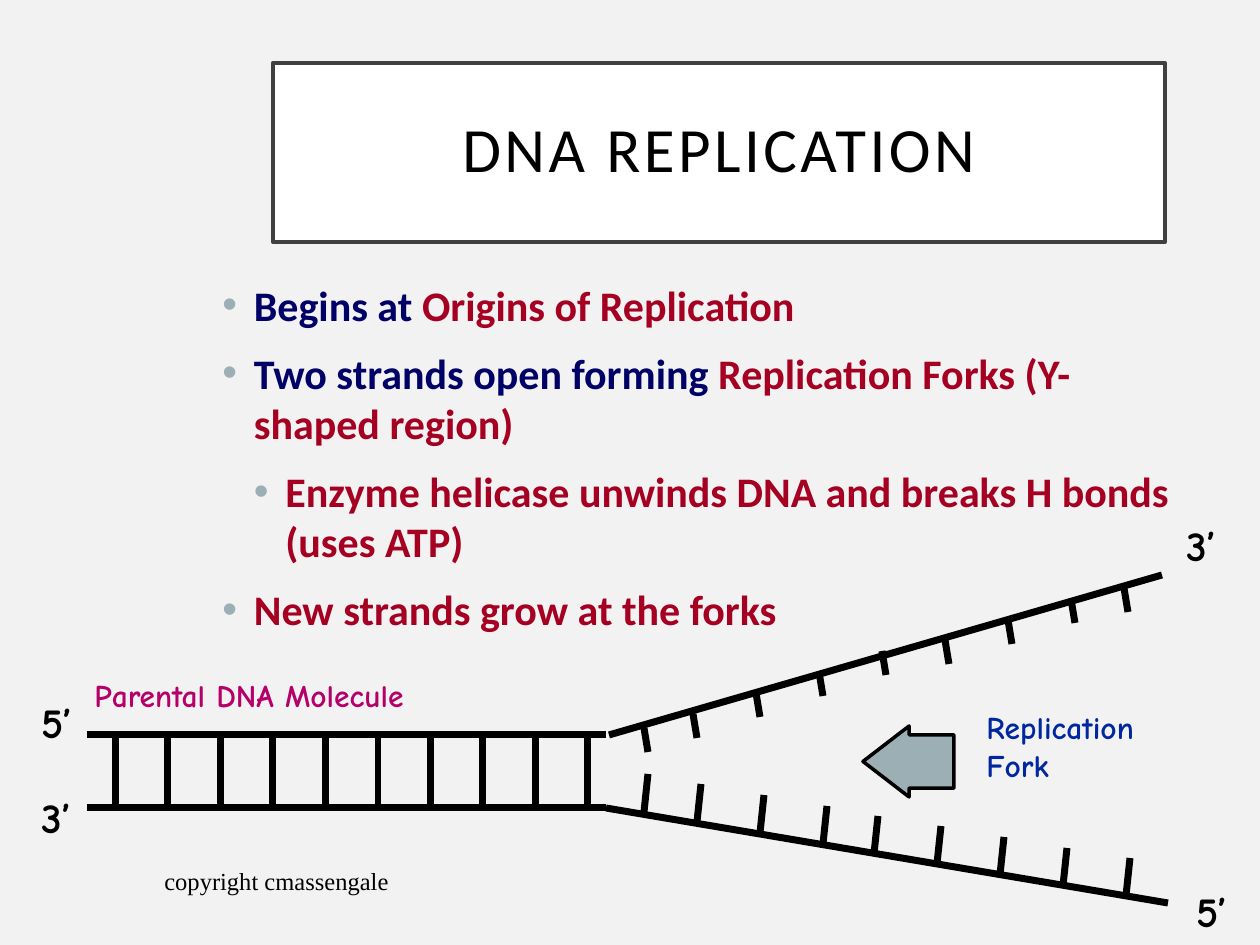
import pptx
import pptx.dml.color
import pptx.enum.shapes
import pptx.enum.text
import pptx.oxml.ns
import pptx.util
from lxml import etree

SCALE = 914400 / 126  # EMU per px
COLORS = {
    "background": "F2F2F2", "white": "FFFFFF", "frame": "404040", "black": "000000",
    "navy": "000066", "red": "A50021", "bullet": "9BAFB5", "blue": "00279F", "magenta": "B50069",
}
ALIGN = pptx.enum.text.PP_ALIGN
ANCHOR = pptx.enum.text.MSO_ANCHOR
SHAPES = pptx.enum.shapes.MSO_SHAPE

# Content: each paragraph is a list of (text, color) runs
TITLE = [[("DNA REPLICATION", "black")]]
POINTS = [
    [("Begins at ", "navy"), ("Origins of Replication", "red")],
    [("Two strands open forming ", "navy"), ("Replication Forks (Y-shaped region)", "red")],
    [("Enzyme helicase unwinds DNA and breaks H bonds (uses ATP)", "red")],
    [("New strands grow at the forks", "red")],
]
POINT_LEVELS = [0, 0, 1, 0]
FORK_LABEL = [[("Replication", "blue")], [("Fork", "blue")]]
MOLECULE_LABEL = [[("Parental DNA Molecule", "magenta")]]
FOOTER = [[("copyright cmassengale", "black")]]
STRAND_ENDS = [("3’", 1174, 513), ("5’", 29, 690), ("3’", 29, 785), ("5’", 1184, 879)]

# Diagram geometry in px
STRANDS = [
    (87, 735, 606, 735), (87, 808, 606, 808),      # parental molecule
    (609, 735, 1162, 575), (606, 808, 1168, 903),  # opened strands
]
RUNG_COUNT, RUNG_FIRST, RUNG_LAST = 10, 116, 588
RUNG_TOP, RUNG_BOTTOM = 738, 805
UPPER_BASES = [(644, 728), (693, 714), (756, 693), (819, 672), (882, 651),
               (945, 640), (1008, 620), (1071, 599), (1124, 588)]
LOWER_BASE_X = [644, 697, 760, 823, 874, 937, 1000, 1063, 1126]
LOWER_FIRST, LOWER_LAST = 812, 896
BASE_SHIFT, UPPER_LENGTH, LOWER_LENGTH = 4, 24, 38


def px(value):
    return pptx.util.Emu(round(value * SCALE))


def rgb(name):
    return pptx.dml.color.RGBColor.from_string(COLORS[name])


def spread(first, last, count):
    return [round(first + (last - first) * i / (count - 1)) for i in range(count)]


def add_bullet(paragraph, level):
    properties = paragraph._p.get_or_add_pPr()
    properties.set("marL", str(228600 * (level + 1)))
    properties.set("indent", "-228600")
    qn = pptx.oxml.ns.qn
    color = etree.SubElement(properties, qn("a:buClr"))
    etree.SubElement(color, qn("a:srgbClr"), val=COLORS["bullet"])
    etree.SubElement(properties, qn("a:buFont"), typeface="Arial")
    etree.SubElement(properties, qn("a:buChar"), char="•")


def write_text(shape, paragraphs, size, font="Comic Neue", bold=True, align=ALIGN.LEFT,
               anchor=ANCHOR.TOP, line_spacing=None, space_before=0, tracking=None, levels=None):
    frame = shape.text_frame
    frame.word_wrap = True
    frame.vertical_anchor = anchor
    for index, runs in enumerate(paragraphs):
        paragraph = frame.add_paragraph() if index else frame.paragraphs[0]
        paragraph.alignment = align
        paragraph.space_before = pptx.util.Pt(space_before)
        if line_spacing:
            paragraph.line_spacing = line_spacing
        if levels:
            paragraph.level = levels[index]
            add_bullet(paragraph, levels[index])
        for text, color in runs:
            run = paragraph.add_run()
            run.text = text
            run.font.name = font
            run.font.size = pptx.util.Pt(size)
            run.font.bold = bold
            run.font.color.rgb = rgb(color)
            if tracking:
                run.font._element.set("spc", str(tracking * 100))


def add_text(slide, box, paragraphs, size, **text_format):
    shape = slide.shapes.add_textbox(*map(px, box))
    write_text(shape, paragraphs, size, **text_format)


def add_shape(slide, kind, box, fill, line, width):
    shape = slide.shapes.add_shape(kind, *map(px, box))
    shape.shadow.inherit = False
    shape.fill.solid()
    shape.fill.fore_color.rgb = rgb(fill)
    shape.line.color.rgb = rgb(line)
    shape.line.width = pptx.util.Pt(width)
    return shape


def add_line(slide, *ends):
    line = slide.shapes.add_connector(pptx.enum.shapes.MSO_CONNECTOR.STRAIGHT, *map(px, ends))
    line.line.color.rgb = rgb("black")
    line.line.width = pptx.util.Pt(4)
    etree.SubElement(line._element.spPr, pptx.oxml.ns.qn("a:effectLst"))


def main():
    presentation = pptx.Presentation()
    presentation.slide_width, presentation.slide_height = px(1260), px(945)
    slide = presentation.slides.add_slide(presentation.slide_layouts[6])
    slide.background.fill.solid()
    slide.background.fill.fore_color.rgb = rgb("background")

    # Title and bullet points
    title = add_shape(slide, SHAPES.RECTANGLE, (273, 63, 892, 179), "white", "frame", 2.5)
    write_text(title, TITLE, 36, font="Calibri", bold=False, align=ALIGN.CENTER,
               anchor=ANCHOR.MIDDLE, line_spacing=0.9, tracking=2)
    add_text(slide, (210, 273, 987, 567), POINTS, 24, font="Calibri",
             space_before=10, levels=POINT_LEVELS)

    # Strands and rungs
    for strand in STRANDS:
        add_line(slide, *strand)
    for x in spread(RUNG_FIRST, RUNG_LAST, RUNG_COUNT):
        add_line(slide, x, RUNG_TOP, x, RUNG_BOTTOM)

    # Unpaired bases on the opened strands
    for x, y in UPPER_BASES:
        add_line(slide, x, y, x + BASE_SHIFT, y + UPPER_LENGTH)
    for x, y in zip(LOWER_BASE_X, spread(LOWER_FIRST, LOWER_LAST, len(LOWER_BASE_X))):
        add_line(slide, x, y, x + BASE_SHIFT, y - LOWER_LENGTH)

    # Fork arrow and labels
    arrow = add_shape(slide, SHAPES.LEFT_ARROW, (863, 726, 91, 71), "bullet", "black", 2)
    arrow.adjustments[0], arrow.adjustments[1] = 0.75, 0.65
    add_text(slide, (974, 702, 242, 113), FORK_LABEL, 18)
    add_text(slide, (82, 670, 495, 63), MOLECULE_LABEL, 18)
    for text, left, top in STRAND_ENDS:
        add_text(slide, (left, top, 60, 63), [[(text, "black")]], 24)

    # Footer
    add_text(slide, (152, 859, 627, 44), FOOTER, 14, font="Times New Roman",
             bold=False, anchor=ANCHOR.MIDDLE)
    presentation.save("out.pptx")


if __name__ == "__main__":
    main()
